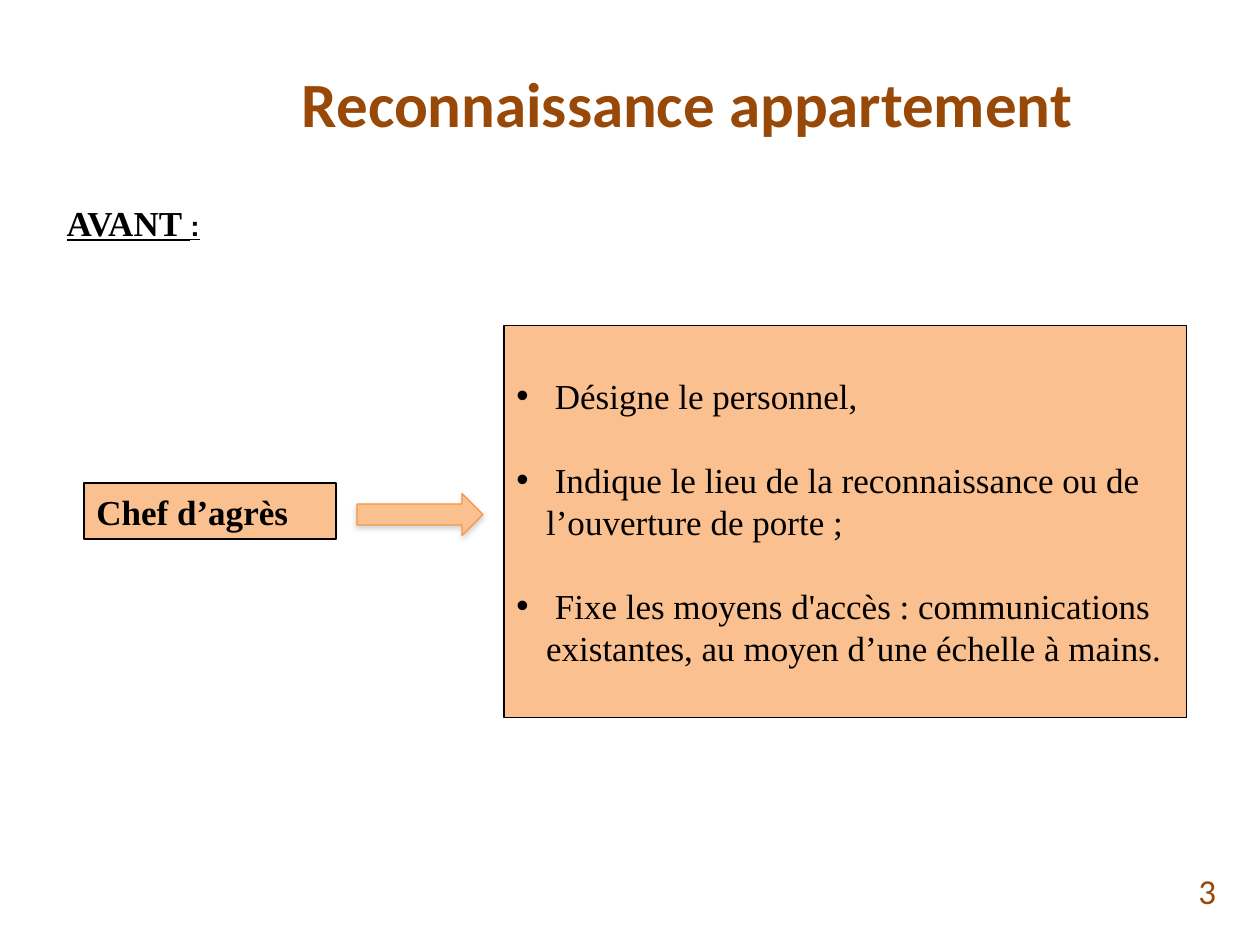
from dataclasses import dataclass
from typing import Optional

from lxml.etree import SubElement
from pptx import Presentation
from pptx.dml.color import RGBColor
from pptx.enum.shapes import MSO_SHAPE
from pptx.enum.text import MSO_ANCHOR, PP_ALIGN
from pptx.oxml.ns import qn
from pptx.util import Pt


@dataclass(frozen=True)
class Theme:
    brown: str = "984807"
    black: str = "000000"
    peach: str = "FAC090"
    orange: str = "F79646"
    shadow: str = "808080"
    sans: str = "Calibri"
    serif: str = "Times New Roman"
    mark: str = "Arial"
    title: float = 36
    body: float = 20
    small: float = 16
    line: float = 0.75
    leading: float = 24
    indent: float = 17


@dataclass(frozen=True)
class Run:
    text: str
    font: str
    size: float
    color: str
    bold: bool = False
    underline: bool = False


@dataclass(frozen=True)
class Box:
    left: float
    top: float
    width: float
    height: float
    paras: tuple[tuple[Run, ...], ...] = ()
    align: PP_ALIGN = PP_ALIGN.LEFT
    anchor: MSO_ANCHOR = MSO_ANCHOR.MIDDLE
    shape: Optional[MSO_SHAPE] = None
    line: str = "000000"
    bullets: bool = False
    wrap: bool = True


T = Theme()


def add_run(p, run: Run) -> None:
    r = p.add_run()
    r.text = run.text
    fmt = {"name": run.font, "size": Pt(run.size), "bold": run.bold, "underline": run.underline}
    for key, value in fmt.items():
        setattr(r.font, key, value)
    r.font.color.rgb = RGBColor.from_string(run.color)


def add_bullet(p, first: bool) -> None:
    pPr = p._p.get_or_add_pPr()
    pPr.set("marL", str(Pt(T.indent)))
    pPr.set("indent", str(-Pt(T.indent)))
    SubElement(pPr, qn("a:buFont"), typeface=T.mark)
    SubElement(pPr, qn("a:buChar"), char="•")
    p.line_spacing = Pt(T.leading)
    p.space_before = Pt(0 if first else T.leading)


def add_box(s, box: Box):
    area = [Pt(v) for v in (box.left, box.top, box.width, box.height)]
    if box.shape is None:
        sp = s.shapes.add_textbox(*area)
    else:
        sp = s.shapes.add_shape(box.shape, *area)
        sp.shadow.inherit = False
        sp.fill.solid()
        sp.fill.fore_color.rgb = RGBColor.from_string(T.peach)
        sp.line.color.rgb = RGBColor.from_string(box.line)
        sp.line.width = Pt(T.line)
    tf = sp.text_frame
    for key, value in {"word_wrap": box.wrap, "vertical_anchor": box.anchor}.items():
        setattr(tf, key, value)
    for i, runs in enumerate(box.paras):
        p = tf.add_paragraph() if i else tf.paragraphs[0]
        p.alignment = box.align
        if box.bullets:
            add_bullet(p, i == 0)
        for run in runs:
            add_run(p, run)
    return sp


def add_shadow(sp, blur: float, dist: float, angle: int, alpha: int) -> None:
    effects = sp._element.spPr.find(qn("a:effectLst"))
    shadow = SubElement(effects, qn("a:outerShdw"), blurRad=str(Pt(blur)), dist=str(Pt(dist)),
                        dir=str(angle * 60000), rotWithShape="0")
    color = SubElement(shadow, qn("a:srgbClr"), val=T.shadow)
    SubElement(color, qn("a:alpha"), val=str(alpha * 1000))


def main() -> None:
    prs = Presentation()
    prs.slide_width, prs.slide_height = Pt(720), Pt(540)
    s = prs.slides.add_slide(prs.slide_layouts[6])

    duties = (
        " Désigne le personnel,",
        " Indique le lieu de la reconnaissance ou de l’ouverture de porte ;",
        " Fixe les moyens d'accès : communications existantes, au moyen d’une échelle à mains.",
    )
    title = Run("Reconnaissance appartement", T.sans, T.title, T.brown, bold=True)
    number = Run("3", T.sans, T.body, T.brown)
    phase = (Run("AVANT ", T.serif, T.body, T.black, True, True),
             Run(":", T.mark, T.small, T.black, True, True))
    leader = Run("Chef d’agrès", T.serif, T.body, T.black, bold=True)

    boxes = (
        Box(87.84, 21.6, 609.84, 74.16, ((title,),), PP_ALIGN.CENTER),
        Box(534.24, 494.64, 167.76, 28.8, ((number,),), PP_ALIGN.RIGHT),
        Box(31, 111.6, 96.5, 31, (phase,), anchor=MSO_ANCHOR.TOP, wrap=False),
        Box(48, 276, 144, 32, ((leader,),), shape=MSO_SHAPE.RECTANGLE),
        Box(288, 186, 390, 224, tuple((Run(d, T.serif, T.body, T.black),) for d in duties),
            shape=MSO_SHAPE.RECTANGLE, bullets=True),
    )
    for box in boxes:
        add_box(s, box)

    arrow = add_box(s, Box(204, 282, 72, 24, shape=MSO_SHAPE.RIGHT_ARROW, line=T.orange))
    add_shadow(arrow, blur=3.1, dist=1.8, angle=90, alpha=35)

    prs.save("out.pptx")


if __name__ == "__main__":
    main()
